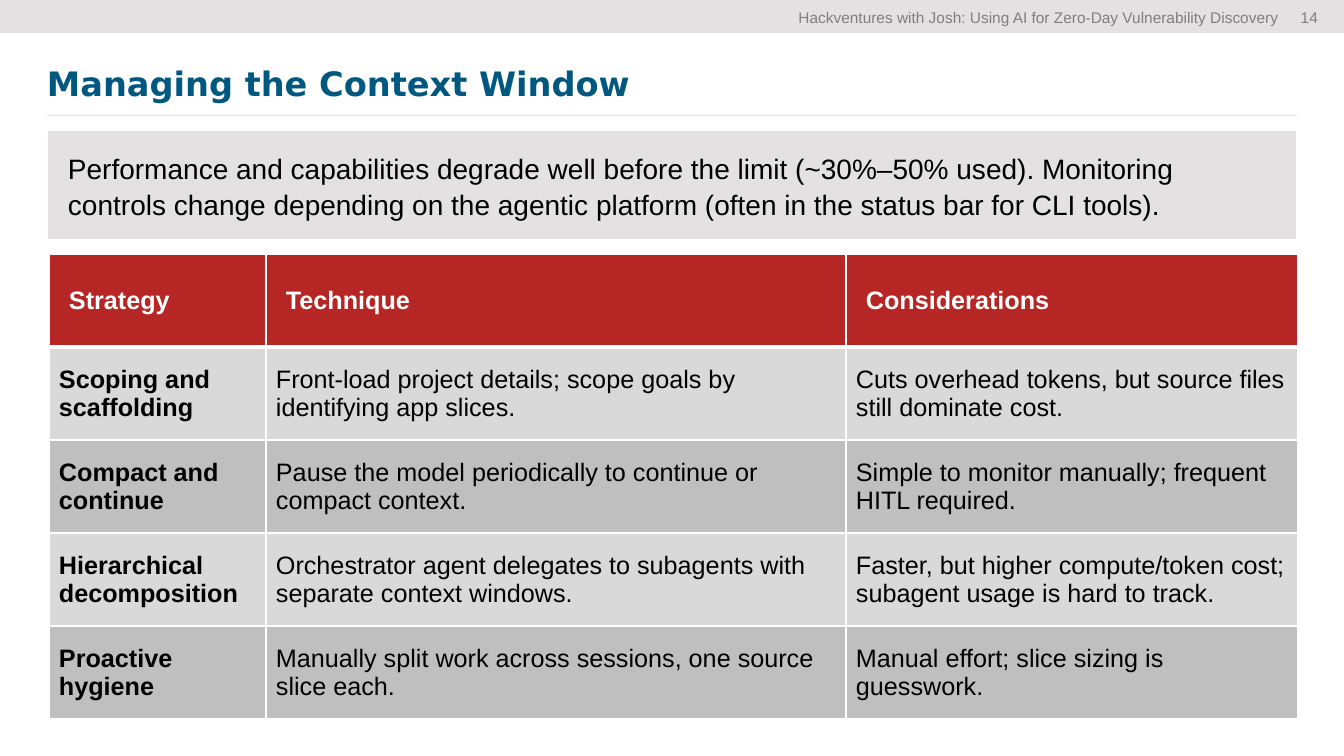
import pptx
import pptx.util
import pptx.dml.color
import pptx.enum.shapes
import pptx.enum.text
import pptx.oxml
import pptx.oxml.ns

RGB = pptx.dml.color.RGBColor
SHAPE = pptx.enum.shapes.MSO_SHAPE
ANCHOR = pptx.enum.text.MSO_ANCHOR
qn = pptx.oxml.ns.qn
NS = pptx.oxml.ns.nsdecls("a")

SCALE = 914400 / 100.8
BLACK = RGB(0x00, 0x00, 0x00)
WHITE = RGB(0xFF, 0xFF, 0xFF)
PALE = RGB(0xE3, 0xE1, 0xE1)
GRAY = RGB(0x7F, 0x7F, 0x7F)
BLUE = RGB(0x00, 0x58, 0x80)
RED = RGB(0xB5, 0x26, 0x24)
LIGHT = RGB(0xD9, 0xD9, 0xD9)
DARK = RGB(0xBF, 0xBF, 0xBF)

HEADS = ("Strategy", "Technique", "Considerations")
ROWS = (
    ("Scoping and scaffolding",
     "Front-load project details; scope goals by identifying app slices.",
     "Cuts overhead tokens, but source files still dominate cost."),
    ("Compact and continue",
     "Pause the model periodically to continue or compact context.",
     "Simple to monitor manually; frequent HITL required."),
    ("Hierarchical decomposition",
     "Orchestrator agent delegates to subagents with separate context windows.",
     "Faster, but higher compute/token cost; subagent usage is hard to track."),
    ("Proactive hygiene",
     "Manually split work across sessions, one source slice each.",
     "Manual effort; slice sizing is guesswork."),
)


def px(num):
    return pptx.util.Emu(round(num * SCALE))


def pad(item, left, top, right, bottom):
    item.margin_left, item.margin_top = px(left), px(top)
    item.margin_right, item.margin_bottom = px(right), px(bottom)


def write(para, text, size, color, bold=False, face="Arial"):
    para.alignment = pptx.enum.text.PP_ALIGN.LEFT
    run = para.add_run()
    run.text = text
    run.font.size = pptx.util.Pt(size)
    run.font.name = face
    run.font.bold = bold
    run.font.color.rgb = color


def panel(slide, box, kind=SHAPE.RECTANGLE, fill=None):
    shape = slide.shapes.add_shape(kind, *map(px, box))
    shape.shadow.inherit = False
    shape.line.fill.background()
    if fill is None:
        shape.fill.background()
    else:
        shape.fill.solid()
        shape.fill.fore_color.rgb = fill
    shape.text_frame.word_wrap = True
    return shape


def header(slide, box):
    left, top, width, height = box
    panel(slide, box, fill=PALE)
    start = left + 535
    label = slide.shapes.add_textbox(
        px(start), px(top), px(left + width - start), px(height + 1))
    frame = label.text_frame
    frame.word_wrap = True
    pad(frame, 16, 8, 25, 8)
    para = frame.paragraphs[0]
    stops = "".join(f'<a:tab pos="{px(pos)}" algn="r"/>' for pos in (728, 767))
    props = para._p.get_or_add_pPr()
    props.append(pptx.oxml.parse_xml(f"<a:tabLst {NS}>{stops}</a:tabLst>"))
    write(para, "\tHackventures with Josh: Using AI for Zero-Day "
          "Vulnerability Discovery", 11, GRAY)
    write(para, "\t14", 11, GRAY)


def title(slide, box):
    shape = panel(slide, box, SHAPE.LINE_CALLOUT_1_NO_BORDER)
    for i, value in enumerate((0.99, 1, 0.99, 0)):
        shape.adjustments[i] = value
    shape.line.color.rgb = BLACK
    shape.line.width = pptx.util.Pt(0.5)
    tint = shape.line._ln.find(".//" + qn("a:srgbClr"))
    tint.append(pptx.oxml.parse_xml(f'<a:alpha {NS} val="15000"/>'))
    frame = shape.text_frame
    frame.vertical_anchor = ANCHOR.MIDDLE
    pad(frame, 0, 20, 0, 12)
    para = frame.paragraphs[0]
    para.line_spacing = 0.9
    write(para, "Managing the Context Window", 24, BLUE, True, "DejaVu Sans")


def summary(slide, box):
    frame = panel(slide, box, fill=PALE).text_frame
    frame.vertical_anchor = ANCHOR.MIDDLE
    pad(frame, 20, 20, 20, 20)
    para = frame.paragraphs[0]
    para.line_spacing = 1.07
    write(para, "Performance and capabilities degrade well before the limit "
          "(~30%–50% used). Monitoring controls change depending on the "
          "agentic platform (often in the status bar for CLI tools).",
          20, BLACK)


def border(cell, base):
    props = cell._tc.get_or_add_tcPr()
    for i, (side, wide) in enumerate(
            (("L", 1), ("R", 1), ("T", 1), ("B", base))):
        props.insert(i, pptx.oxml.parse_xml(
            f'<a:ln{side} {NS} w="{pptx.util.Pt(wide)}"><a:solidFill>'
            f'<a:srgbClr val="{WHITE}"/></a:solidFill></a:ln{side}>'))


def grid(slide, box):
    data = (HEADS,) + ROWS
    table = slide.shapes.add_table(
        len(data), len(HEADS), *map(px, box)).table
    for col, width in zip(table.columns, (217, 580, box[2] - 797)):
        col.width = px(width)
    for r, texts in enumerate(data):
        head = r == 0
        table.rows[r].height = px(box[3] - 4 * 93 if head else 93)
        for c, text in enumerate(texts):
            cell = table.cell(r, c)
            cell.vertical_anchor = ANCHOR.MIDDLE
            cell.fill.solid()
            cell.fill.fore_color.rgb = (
                RED if head else LIGHT if r % 2 else DARK)
            if head:
                pad(cell, 20, 20, 10, 20)
            else:
                pad(cell, 10, 5, 10, 5)
            border(cell, 3 if head else 1)
            write(cell.text_frame.paragraphs[0], text, 18,
                  WHITE if head else BLACK, head or c == 0)


def main():
    deck = pptx.Presentation()
    deck.slide_width, deck.slide_height = px(1344), px(756)
    slide = deck.slides.add_slide(deck.slide_layouts[6])
    header(slide, (0, 0, 1344, 33))
    title(slide, (47, 47, 1250, 69))
    summary(slide, (48, 131, 1248, 108))
    grid(slide, (49, 254, 1249, 465))
    deck.save("out.pptx")


if __name__ == "__main__":
    main()
